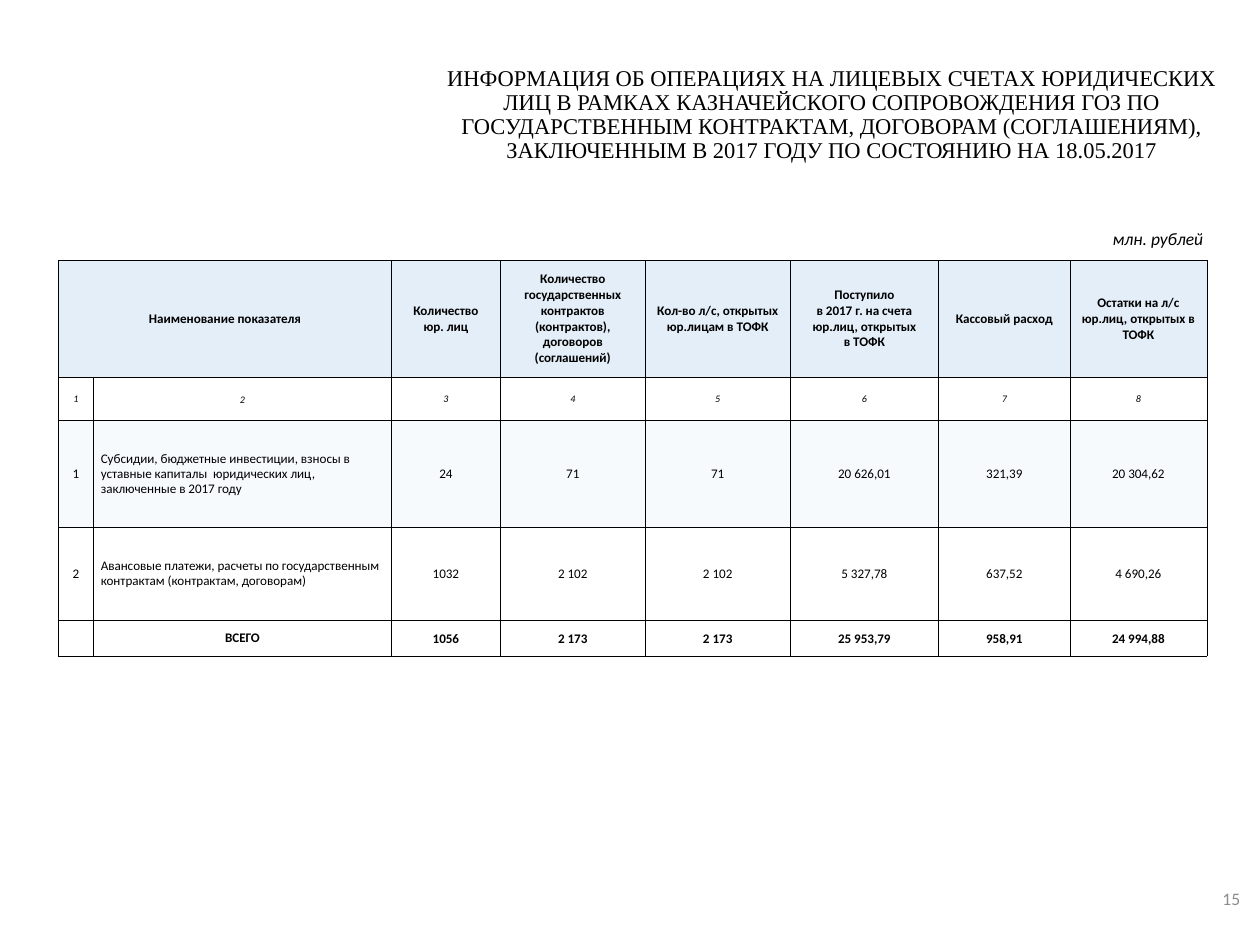
"""Build the slide on treasury-supported account operations in 2017."""
from dataclasses import dataclass
from typing import Any

from lxml import etree
from pptx import Presentation
from pptx.dml.color import RGBColor
from pptx.enum.text import MSO_ANCHOR, MSO_AUTO_SIZE, PP_ALIGN
from pptx.oxml.ns import qn
from pptx.util import Inches, Pt

CENTER, LEFT, RIGHT = PP_ALIGN.CENTER, PP_ALIGN.LEFT, PP_ALIGN.RIGHT
TOP, MIDDLE = MSO_ANCHOR.TOP, MSO_ANCHOR.MIDDLE
GROW, FIXED = MSO_AUTO_SIZE.SHAPE_TO_FIT_TEXT, MSO_AUTO_SIZE.NONE
BLACK = RGBColor(0x00, 0x00, 0x00)
WHITE = RGBColor(0xFF, 0xFF, 0xFF)
GRAY = RGBColor(0x8C, 0x8C, 0x8C)
PALE_BLUE = RGBColor(0xDE, 0xEB, 0xF7)

TITLE = (
    "ИНФОРМАЦИЯ ОБ ОПЕРАЦИЯХ НА ЛИЦЕВЫХ СЧЕТАХ ЮРИДИЧЕСКИХ ЛИЦ "
    "В РАМКАХ КАЗНАЧЕЙСКОГО СОПРОВОЖДЕНИЯ ГОЗ ПО ГОСУДАРСТВЕННЫМ "
    "КОНТРАКТАМ, ДОГОВОРАМ (СОГЛАШЕНИЯМ), ЗАКЛЮЧЕННЫМ В 2017 ГОДУ "
    "ПО СОСТОЯНИЮ НА 18.05.2017"
)
COLUMN_WIDTHS = (0.39, 3.31, 1.21, 1.61, 1.61, 1.65, 1.46, 1.52)
NAME_COLUMN = 1
HEADER_MARGINS = (0.08, 0, 0.08, 0)
VALUE_MARGINS = (0.01, 0.01, 0.01, 0)
NAME_MARGINS = (0.08, 0.01, 0.04, 0)


@dataclass
class Label:
    """A text box with its place and format."""

    text: str
    box: tuple[float, float, float, float]
    alignment: PP_ALIGN
    font: dict[str, Any]
    color: RGBColor = BLACK
    anchor: MSO_ANCHOR = TOP
    auto_size: MSO_AUTO_SIZE = GROW
    line_spacing: float = 1.0


@dataclass
class TableRow:
    """A table row with its height, fill and text format."""

    height: float
    texts: tuple[str, ...]
    fill: RGBColor
    opacity: int = 100
    size: float = 10.5
    bold: bool = False
    italic: bool = False
    margins: tuple[float, ...] = VALUE_MARGINS
    name_margins: tuple[float, ...] = VALUE_MARGINS
    name_alignment: PP_ALIGN = CENTER
    name_spacing: Any = Pt(12)


LABELS = (
    Label(TITLE, (4.65, 0.68, 9.18, 1.48), CENTER,
          {"size": Pt(18), "name": "Times New Roman"}, line_spacing=0.9),
    Label("15", (10.75, 9.7, 3.15, 0.56), RIGHT,
          {"size": Pt(14), "name": "Calibri"}, GRAY, MIDDLE, FIXED),
    Label("млн. рублей", (12.04, 2.47, 1.45, 0.35), RIGHT,
          {"size": Pt(14), "name": "Calibri", "italic": True}),
)
ROWS = (
    TableRow(1.3, (
        "Наименование показателя", "", "Количество\nюр. лиц",
        "Количество государственных контрактов (контрактов), договоров (соглашений)",
        "Кол-во л/с, открытых юр.лицам в ТОФК",
        "Поступило\nв 2017 г. на счета юр.лиц, открытых\nв ТОФК",
        "Кассовый расход", "Остатки на л/с юр.лиц, открытых в ТОФК",
    ), PALE_BLUE, 81, bold=True, margins=HEADER_MARGINS),
    TableRow(0.48, tuple("12345678"), WHITE, size=8, italic=True),
    TableRow(1.19, (
        "1", "Субсидии, бюджетные инвестиции, взносы в уставные капиталы  "
        "юридических лиц, заключенные в 2017 году",
        "24", "71", "71", "20 626,01", "321,39", "20 304,62",
    ), PALE_BLUE, 23, name_margins=NAME_MARGINS, name_alignment=LEFT),
    TableRow(1.03, (
        "2", "Авансовые платежи, расчеты по государственным контрактам "
        "(контрактам, договорам)",
        "1032", "2 102", "2 102", "5 327,78", "637,52", "4 690,26",
    ), WHITE, name_margins=NAME_MARGINS, name_alignment=LEFT),
    TableRow(0.4, (
        "", "ВСЕГО", "1056", "2 173", "2 173", "25 953,79", "958,91", "24 994,88",
    ), WHITE, 23, bold=True),
)


def set_values(target: Any, values: dict[str, Any]) -> None:
    """Set each named format value on the target."""
    for name, value in values.items():
        setattr(target, name, value)


def write_text(frame: Any, text: str, paragraph_format: dict[str, Any],
               font: dict[str, Any], color: RGBColor) -> None:
    """Write one formatted paragraph for each line of text."""
    frame.text = text
    for paragraph in frame.paragraphs:
        set_values(paragraph, paragraph_format)
        for run in paragraph.runs:
            set_values(run.font, font)
            run.font.color.rgb = color


def margin_values(margins: tuple[float, ...]) -> dict[str, Any]:
    """Name the left, top, right and bottom margins."""
    names = ("margin_left", "margin_top", "margin_right", "margin_bottom")
    return dict(zip(names, map(Inches, margins)))


def add_label(slide: Any, label: Label) -> None:
    """Add a text box to the slide."""
    frame = slide.shapes.add_textbox(*map(Inches, label.box)).text_frame
    set_values(frame, {
        "word_wrap": True, "auto_size": label.auto_size,
        "vertical_anchor": label.anchor,
        **margin_values((0.12, 0.06, 0.12, 0.06)),
    })
    write_text(frame, label.text,
               {"alignment": label.alignment, "line_spacing": label.line_spacing},
               label.font, label.color)


def paint_cell(cell: Any, color: RGBColor, opacity: int) -> None:
    """Fill a cell and draw a thin black border on its four sides."""
    cell.fill.solid()
    cell.fill.fore_color.rgb = color
    properties = cell._tc.get_or_add_tcPr()
    if opacity < 100:
        fill_color = properties.find(f"{qn('a:solidFill')}/{qn('a:srgbClr')}")
        etree.SubElement(fill_color, qn("a:alpha"), val=str(opacity * 1000))
    for position, side in enumerate(("lnL", "lnR", "lnT", "lnB")):
        line = etree.Element(qn(f"a:{side}"), w=str(Pt(0.25)))
        line_fill = etree.SubElement(line, qn("a:solidFill"))
        etree.SubElement(line_fill, qn("a:srgbClr"), val=str(BLACK))
        properties.insert(position, line)


def fill_row(table: Any, row_index: int, row: TableRow) -> None:
    """Write and paint the cells of one table row."""
    table.rows[row_index].height = Inches(row.height)
    font = {"size": Pt(row.size), "name": "Calibri",
            "bold": row.bold, "italic": row.italic}
    for column_index, text in enumerate(row.texts):
        cell = table.cell(row_index, column_index)
        is_name = column_index == NAME_COLUMN
        margins = row.name_margins if is_name else row.margins
        set_values(cell, {"vertical_anchor": MIDDLE, **margin_values(margins)})
        paragraph_format = {"alignment": CENTER}
        if is_name:
            paragraph_format = {"alignment": row.name_alignment,
                                "line_spacing": row.name_spacing}
        write_text(cell.text_frame, text, paragraph_format, font, BLACK)
        paint_cell(cell, row.fill, row.opacity)


def add_operations_table(slide: Any) -> None:
    """Add the table of account operations."""
    table = slide.shapes.add_table(
        len(ROWS), len(COLUMN_WIDTHS), Inches(0.65), Inches(2.89),
        Inches(sum(COLUMN_WIDTHS)), Inches(sum(row.height for row in ROWS)),
    ).table
    set_values(table, {"first_row": False, "horz_banding": False})
    for column, width in zip(table.columns, COLUMN_WIDTHS):
        column.width = Inches(width)
    for row_index, row in enumerate(ROWS):
        fill_row(table, row_index, row)
    table.cell(0, 0).merge(table.cell(0, NAME_COLUMN))


def main() -> None:
    """Build and save the presentation."""
    presentation = Presentation()
    set_values(presentation, {"slide_width": Inches(14), "slide_height": Inches(10.5)})
    slide = presentation.slides.add_slide(presentation.slide_layouts[6])
    add_operations_table(slide)
    for label in LABELS:
        add_label(slide, label)
    presentation.save("out.pptx")


if __name__ == "__main__":
    main()
